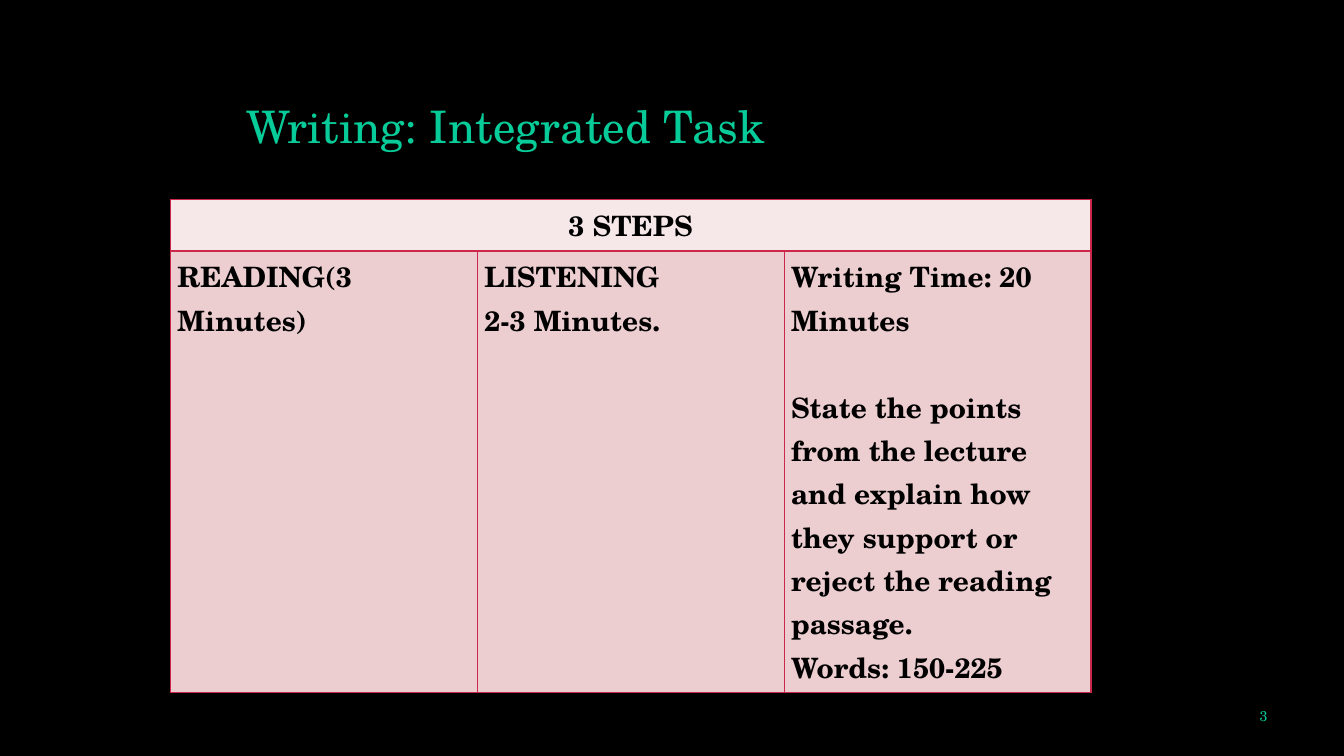
from pptx import Presentation
from pptx.dml.color import RGBColor
from pptx.enum.text import MSO_ANCHOR, PP_ALIGN
from pptx.oxml import parse_xml
from pptx.oxml.ns import nsdecls
from pptx.util import Inches, Pt

FONT = "TeX Gyre Schola"
COLORS = {
    "back": "000000",
    "green": "07CB98",
    "ink": "000000",
    "line": "CB274A",
    "head": "F6E8E9",
    "body": "ECCDD0",
}
STEPS = [
    ["READING(3 Minutes)"],
    ["LISTENING", "2-3 Minutes."],
    [
        "Writing Time: 20",
        "Minutes",
        "State the points from the lecture and explain how they support "
        "or reject the reading passage.",
        "Words: 150-225",
    ],
]
GAP_AT = (2, 2)


def color(name):
    return RGBColor.from_string(COLORS[name])


def add_run(para, text, size, tint, bold=False):
    run = para.add_run()
    run.text = text
    font = run.font
    font.name, font.size, font.bold = FONT, Pt(size), bold
    font.color.rgb = color(tint)


def add_title(slide, left, top, width, height):
    title = slide.shapes.title
    title.left, title.top = Inches(left), Inches(top)
    title.width, title.height = Inches(width), Inches(height)
    frame = title.text_frame
    frame.vertical_anchor = MSO_ANCHOR.BOTTOM
    para = frame.paragraphs[0]
    para.alignment = PP_ALIGN.LEFT
    para.line_spacing = 0.9
    add_run(para, "Writing: Integrated Task", 32, "green")


def style_cell(cell, fill):
    cell.margin_left = cell.margin_right = Inches(0.07)
    cell.margin_top = cell.margin_bottom = Inches(0.04)
    props = cell._tc.get_or_add_tcPr()
    for side in ("lnL", "lnR", "lnT", "lnB"):
        props.append(parse_xml(
            f'<a:{side} {nsdecls("a")} w="{Pt(1)}"><a:solidFill>'
            f'<a:srgbClr val="{COLORS["line"]}"/></a:solidFill></a:{side}>'
        ))
    cell.fill.solid()
    cell.fill.fore_color.rgb = color(fill)


def add_steps(slide, left, top, width, heights):
    table = slide.shapes.add_table(
        2, len(STEPS), Inches(left), Inches(top),
        Inches(width), Inches(sum(heights)),
    ).table
    for row, height in zip(table.rows, heights):
        row.height = Inches(height)
    for row, fill in enumerate(("head", "body")):
        for col in range(len(STEPS)):
            style_cell(table.cell(row, col), fill)
    head = table.cell(0, 0)
    head.merge(table.cell(0, len(STEPS) - 1))
    para = head.text_frame.paragraphs[0]
    para.alignment = PP_ALIGN.CENTER
    add_run(para, "3 STEPS", 20, "ink", True)
    for col, lines in enumerate(STEPS):
        frame = table.cell(1, col).text_frame
        for num, line in enumerate(lines):
            para = frame.add_paragraph() if num else frame.paragraphs[0]
            if (col, num) == GAP_AT:
                para.space_before = Pt(31)
            add_run(para, line, 20, "ink", True)


def add_number(slide, left, top, width, height):
    box = slide.shapes.add_textbox(
        Inches(left), Inches(top), Inches(width), Inches(height))
    frame = box.text_frame
    frame.word_wrap = True
    frame.vertical_anchor = MSO_ANCHOR.MIDDLE
    para = frame.paragraphs[0]
    para.alignment = PP_ALIGN.RIGHT
    add_run(para, "3", 10.2, "green")


def main():
    deck = Presentation()
    deck.slide_width, deck.slide_height = Inches(13.33), Inches(7.5)
    slide = deck.slides.add_slide(deck.slide_layouts[5])
    slide.background.fill.solid()
    slide.background.fill.fore_color.rgb = color("back")
    add_title(slide, 2.34, 0.4, 9.57, 1.17)
    add_steps(slide, 1.69, 1.98, 9.13, (0.39, 3.52))
    add_number(slide, 11.76, 6.98, 0.91, 0.25)
    deck.save("out.pptx")


if __name__ == "__main__":
    main()
